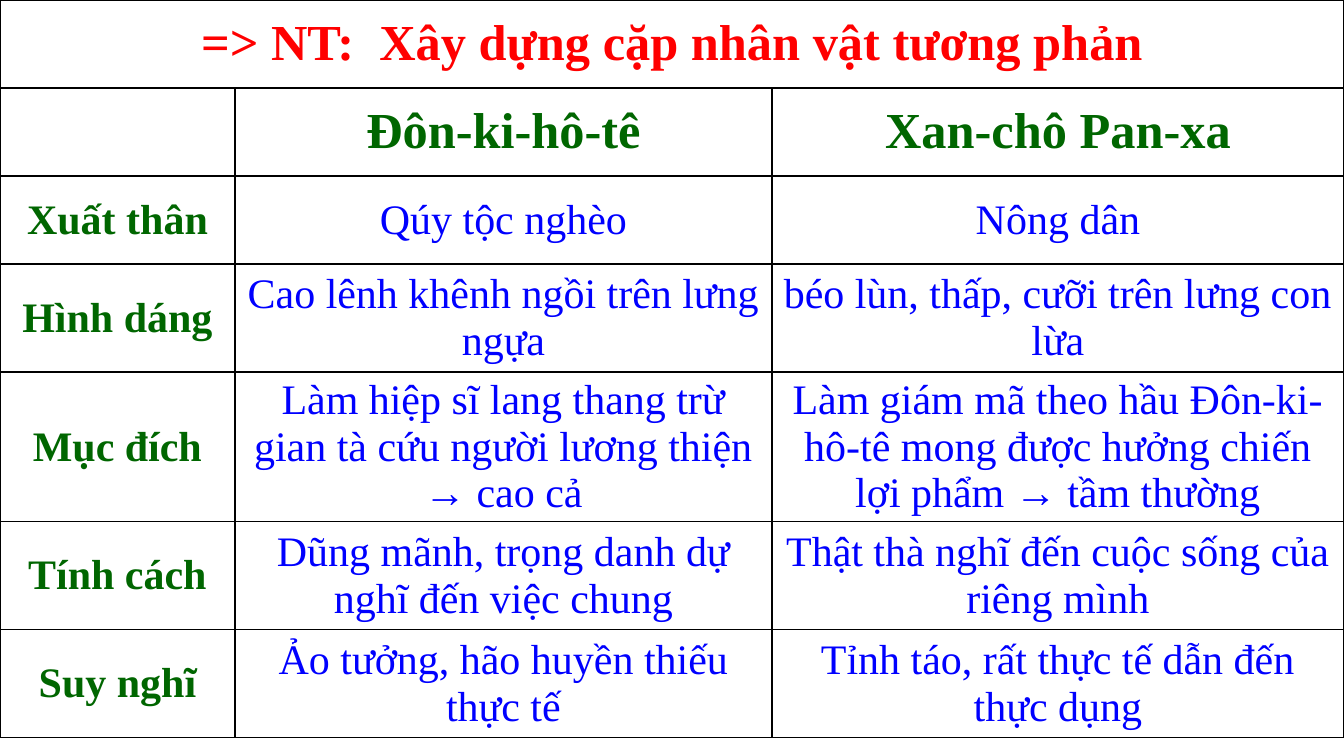
"""Build a slide with a table that contrasts two characters."""
from typing import NamedTuple

from pptx import Presentation, util as u
from pptx.dml.color import RGBColor
from pptx.enum import text as t
from pptx.oxml import parse_xml
from pptx.oxml.ns import nsdecls
from pptx.table import Table, _Cell

PX = 914400 / 100.8
FONT = "Times New Roman"
HUES = {"title": "FF0000", "head": "006600", "body": "0000FF", "line": "000000"}
COLS = (235, 537, 572)


class Look(NamedTuple):
    hue: str
    size: int
    bold: bool


class Row(NamedTuple):
    high: int
    cells: tuple[str, str, str]
    looks: tuple[Look, Look, Look]


TITLE = Look("title", 36, True)
NAME = Look("head", 36, True)
TRAIT = Look("head", 30, True)
BODY = Look("body", 30, False)
LINE = (TRAIT, BODY, BODY)

ROWS = (
    Row(88, ("=> NT:  Xây dựng cặp nhân vật tương phản", "", ""), (TITLE,) * 3),
    Row(88, ("", "Đôn-ki-hô-tê", "Xan-chô Pan-xa"), (NAME,) * 3),
    Row(88, ("Xuất thân", "Qúy tộc nghèo", "Nông dân"), LINE),
    Row(108, ("Hình dáng", "Cao lênh khênh ngồi trên lưng ngựa",
              "béo lùn, thấp, cưỡi trên lưng con lừa"), LINE),
    Row(108, ("Mục đích",
              "Làm hiệp sĩ lang thang trừ gian tà cứu người lương thiện → cao cả",
              "Làm giám mã theo hầu Đôn-ki-hô-tê mong được hưởng chiến lợi phẩm"
              " → tầm thường"), LINE),
    Row(108, ("Tính cách", "Dũng mãnh, trọng danh dự nghĩ đến việc chung",
              "Thật thà nghĩ đến cuộc sống của riêng mình"), LINE),
    Row(108, ("Suy nghĩ", "Ảo tưởng, hão huyền thiếu thực tế",
              "Tỉnh táo, rất thực tế dẫn đến thực dụng"), LINE),
)


def emu(px: int) -> u.Emu:
    """Turn px into EMU."""
    return u.Emu(round(px * PX))


def edge(cell: _Cell) -> None:
    """Rule all four sides of a cell."""
    props = cell._tc.get_or_add_tcPr()
    for spot, side in enumerate("LRTB"):
        props.insert(spot, parse_xml(
            f'<a:ln{side} {nsdecls("a")} w="{u.Pt(1)}"><a:solidFill>'
            f'<a:srgbClr val="{HUES["line"]}"/></a:solidFill></a:ln{side}>'))


def write(cell: _Cell, words: str, look: Look) -> None:
    """Fill one cell with styled, centred text."""
    cell.fill.background()
    edge(cell)
    cell.vertical_anchor = t.MSO_ANCHOR.MIDDLE
    cell.text = words
    para = cell.text_frame.paragraphs[0]
    para.alignment = t.PP_ALIGN.CENTER
    font = para.font
    font.name, font.size, font.bold = FONT, u.Pt(look.size), look.bold
    font.color.rgb = RGBColor.from_string(HUES[look.hue])


def draw(table: Table) -> None:
    """Size the grid and write every cell."""
    for col, wide in zip(table.columns, COLS):
        col.width = emu(wide)
    for y, row in enumerate(ROWS):
        table.rows[y].height = emu(row.high)
        for x, (words, look) in enumerate(zip(row.cells, row.looks)):
            write(table.cell(y, x), words, look)
    table.cell(0, 0).merge(table.cell(0, len(COLS) - 1))


def main() -> None:
    """Make and save the slide."""
    deck = Presentation()
    deck.slide_width, deck.slide_height = emu(1344), emu(756)
    slide = deck.slides.add_slide(deck.slide_layouts[6])
    frame = slide.shapes.add_table(
        len(ROWS), len(COLS), 0, 0, emu(1344), emu(759))
    draw(frame.table)
    frame.height = emu(759)
    deck.save("out.pptx")


if __name__ == "__main__":
    main()
